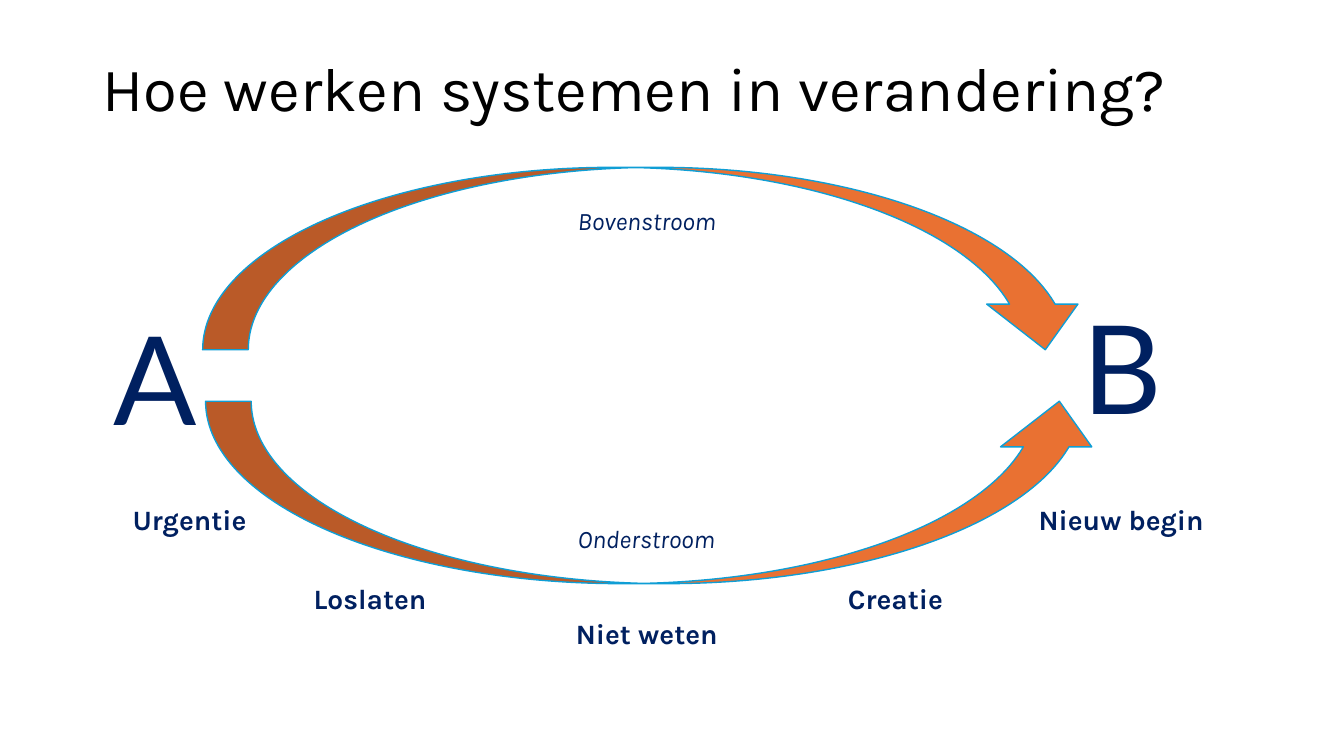
from pptx import Presentation
from pptx import util as u
from pptx.dml.color import RGBColor
from pptx.enum import shapes, text

COLORS = {"title": "000000", "label": "002060", "arrow": "E97132", "edge": "0F9ED5"}
WIDTH, HEIGHT = u.Inches(13.33), u.Inches(7.5)

# Places are left, top, width, height in percent of the slide
TITLE = (6.9, 5.33, 86.27, 13.6)
POINTS = [("A", (7.73, 39.33, 6, 21.07)), ("B", (79.82, 37.87, 5.48, 21.07))]
ARROWS = [
    (shapes.MSO_SHAPE.CURVED_DOWN_ARROW, (15.08, 22.13, 66.09, 24.13)),
    (shapes.MSO_SHAPE.CURVED_UP_ARROW, (15.3, 53.07, 66.92, 24.13)),
]
STREAMS = [
    ("Bovenstroom", (39.91, 26.53, 16.43, 5.33)),
    ("Onderstroom", (40.29, 68.53, 15.6, 5.33)),
]
PHASES = [
    ("Urgentie", (8.78, 65.87, 10.65, 5.87)),
    ("Loslaten", (22.06, 76.27, 10.95, 5.87)),
    ("Niet weten", (41.49, 80.93, 13.28, 5.87)),
    ("Creatie", (61.97, 76.27, 9.3, 5.87)),
    ("Nieuw begin", (76.07, 65.87, 14.7, 5.87)),
]


def place(share):
    """Turn percentages of the slide into lengths."""
    return [int(size * part / 100) for size, part in zip((WIDTH, HEIGHT) * 2, share)]


def color(name):
    return RGBColor.from_string(COLORS[name])


def write(sp, words, size, font, name, align, bold=False, italic=False):
    tf = sp.text_frame
    tf.text = words
    tf.word_wrap = True
    p = tf.paragraphs[0]
    p.alignment = align
    r = p.runs[0]
    r.font.name, r.font.size = font, u.Pt(size)
    r.font.bold, r.font.italic = bold, italic
    r.font.color.rgb = color(name)
    return p


def add_title(s, words):
    sp = s.shapes.title
    sp.left, sp.top, sp.width, sp.height = place(TITLE)
    p = write(sp, words, 44, "Karla", "title", text.PP_ALIGN.LEFT)
    p.line_spacing = 0.9
    sp.text_frame.vertical_anchor = text.MSO_ANCHOR.MIDDLE


def add_label(s, words, share, size, font="Karla", align=text.PP_ALIGN.CENTER, **style):
    sp = s.shapes.add_textbox(*place(share))
    write(sp, words, size, font, "label", align, **style)
    sp.text_frame.auto_size = text.MSO_AUTO_SIZE.SHAPE_TO_FIT_TEXT


def add_arrow(s, kind, share):
    sp = s.shapes.add_shape(kind, *place(share))
    sp.shadow.inherit = False
    sp.fill.solid()
    sp.fill.fore_color.rgb = color("arrow")
    sp.line.color.rgb = color("edge")
    sp.line.width = u.Pt(1)


def main():
    prs = Presentation()
    prs.slide_width, prs.slide_height = WIDTH, HEIGHT
    s = prs.slides.add_slide(prs.slide_layouts[5])
    add_title(s, "Hoe werken systemen in verandering?")

    # Start and end of the change
    for words, share in POINTS:
        add_label(s, words, share, 88, font="Lato", align=text.PP_ALIGN.LEFT)

    # Upper and lower stream
    for kind, share in ARROWS:
        add_arrow(s, kind, share)
    for words, share in STREAMS:
        add_label(s, words, share, 18, italic=True)

    # Phases along the lower stream
    for words, share in PHASES:
        add_label(s, words, share, 20, bold=True)

    prs.save("out.pptx")


if __name__ == "__main__":
    main()
